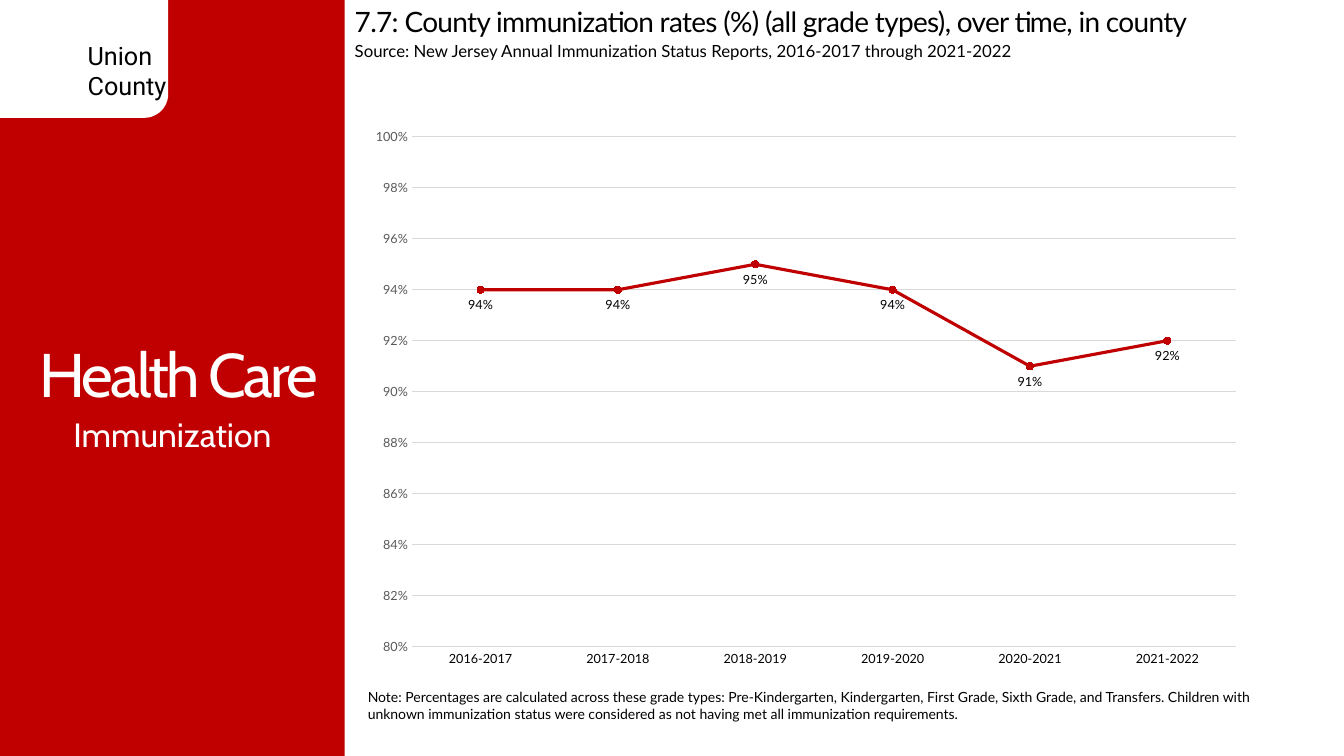
from pptx import Presentation
from pptx.chart.data import CategoryChartData
from pptx.dml.color import RGBColor
from pptx.enum.chart import XL_CHART_TYPE as ChartType
from pptx.enum.chart import XL_LABEL_POSITION as LabelPosition
from pptx.enum.chart import XL_MARKER_STYLE as MarkerStyle
from pptx.enum.chart import XL_TICK_MARK as TickMark
from pptx.enum.shapes import MSO_SHAPE as Shape
from pptx.enum.text import MSO_ANCHOR as Anchor
from pptx.enum.text import PP_ALIGN as Align
from pptx.util import Cm, Pt

RED, WHITE, BLACK = "C00000", "FFFFFF", "000000"
GRID_GREY, LABEL_GREY = "D9D9D9", "595959"
PANEL_WIDTH = 8.69

RATES = {
    "2016-2017": 0.94,
    "2017-2018": 0.94,
    "2018-2019": 0.95,
    "2019-2020": 0.94,
    "2020-2021": 0.91,
    "2021-2022": 0.92,
}


def color(hex_string):
    return RGBColor.from_string(hex_string)


def add_block(page, kind, left, top, width, height, fill):
    block = page.shapes.add_shape(kind, Cm(left), Cm(top), Cm(width), Cm(height))
    block.shadow.inherit = False
    block.fill.solid()
    block.fill.fore_color.rgb = color(fill)
    block.line.fill.background()


def style_font(font, name, size, hex_string):
    font.name = name
    font.size = Pt(size)
    font.color.rgb = color(hex_string)


def add_text(page, left, top, width, height, text, font, size,
             hex_string=BLACK, align=Align.LEFT, anchor=Anchor.TOP,
             line_spacing=None, tracking=0):
    """Add a text box; tracking is the letter spacing in points."""
    box = page.shapes.add_textbox(Cm(left), Cm(top), Cm(width), Cm(height))
    frame = box.text_frame
    frame.word_wrap = True
    frame.vertical_anchor = anchor
    frame.text = text
    for para in frame.paragraphs:
        para.alignment = align
        para.line_spacing = line_spacing
        for span in para.runs:
            style_font(span.font, font, size, hex_string)
            if tracking:
                span.font._element.set("spc", str(int(tracking * 100)))


def style_line(line, hex_string, width):
    line.color.rgb = color(hex_string)
    line.width = Pt(width)


def style_axis(axis, hex_string):
    axis.major_tick_mark = axis.minor_tick_mark = TickMark.NONE
    style_font(axis.tick_labels.font, "Lato", 9, hex_string)


def style_series(series):
    series.smooth = False
    style_line(series.format.line, RED, 2.25)
    marker = series.marker
    marker.style = MarkerStyle.CIRCLE
    marker.size = 5
    marker.format.fill.solid()
    marker.format.fill.fore_color.rgb = color(RED)
    style_line(marker.format.line, RED, 0.75)

    labels = series.data_labels
    labels.show_value = True
    labels.position = LabelPosition.BELOW
    labels.number_format = "0%"
    labels.number_format_is_linked = False
    style_font(labels.font, "Lato", 9, BLACK)


def add_rate_chart(page, left, top, width, height):
    data = CategoryChartData(number_format="0%")
    data.categories = list(RATES)
    data.add_series("Series 1", list(RATES.values()))
    chart = page.shapes.add_chart(ChartType.LINE_MARKERS, Cm(left), Cm(top),
                                  Cm(width), Cm(height), data).chart
    chart.has_title = False
    chart.has_legend = False
    style_font(chart.font, "Calibri", 10, BLACK)

    years = chart.category_axis
    style_axis(years, BLACK)
    style_line(years.format.line, GRID_GREY, 0.75)

    percents = chart.value_axis
    style_axis(percents, LABEL_GREY)
    percents.format.line.fill.background()
    percents.minimum_scale, percents.maximum_scale = 0.8, 1
    percents.major_unit = 0.02
    percents.tick_labels.number_format = "0%"
    percents.tick_labels.number_format_is_linked = False
    style_line(percents.major_gridlines.format.line, GRID_GREY, 0.75)

    plot = chart.plots[0]
    plot.vary_by_categories = False
    style_series(plot.series[0])


def main():
    deck = Presentation()
    deck.slide_width, deck.slide_height = Cm(33.87), Cm(19.05)
    page = deck.slides.add_slide(deck.slide_layouts[6])

    add_block(page, Shape.RECTANGLE, 0, 0, PANEL_WIDTH, 19.05, RED)
    add_block(page, Shape.ROUNDED_RECTANGLE, -0.84, -0.64, 5.08, 3.61, WHITE)
    add_text(page, 1.96, 0.89, 2.54, 1.8, "Union\nCounty", "Roboto", 18)
    add_text(page, 0, 1.9, 9.02, 15.24, "Health Care", "Cabin", 44, WHITE,
             Align.CENTER, Anchor.MIDDLE, line_spacing=0.9, tracking=-2)

    add_text(page, PANEL_WIDTH, 0, 25.04, 1.12,
             "7.7: County immunization rates (%) (all grade types), "
             "over time, in county", "Lato", 20, tracking=-0.5)
    add_text(page, PANEL_WIDTH, 0.91, 23.34, 0.76,
             "Source: New Jersey Annual Immunization Status Reports, "
             "2016-2017 through 2021-2022", "Lato", 12)
    add_text(page, 9.02, 17.22, 23.57, 1.12,
             "Note: Percentages are calculated across these grade types: "
             "Pre-Kindergarten, Kindergarten, First Grade, Sixth Grade, and "
             "Transfers. Children with unknown immunization status were "
             "considered as not having met all immunization requirements.",
             "Lato", 10)
    add_rate_chart(page, 9.02, 2.97, 22.58, 14.1)
    add_text(page, 0, 10.31, PANEL_WIDTH, 1.27, "Immunization", "Cabin", 24,
             WHITE, Align.CENTER)

    deck.save("out.pptx")


if __name__ == "__main__":
    main()
